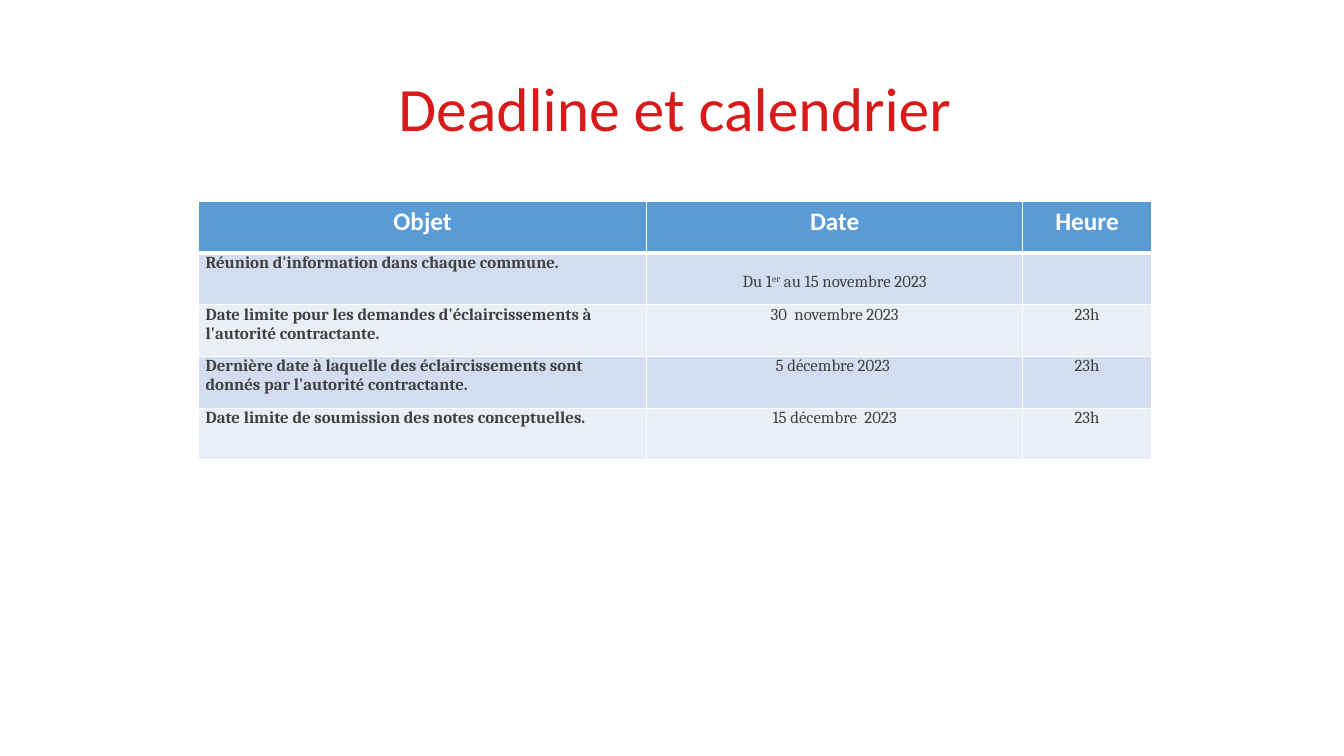
"""Build the slide that lists the deadlines of the call in a table."""
from dataclasses import dataclass

from lxml.etree import SubElement
from pptx import Presentation
from pptx.dml.color import RGBColor
from pptx.enum.text import MSO_ANCHOR, PP_ALIGN
from pptx.oxml.ns import qn
from pptx.slide import Slide
from pptx.table import Table, _Cell
from pptx.text.text import _Paragraph
from pptx.util import Emu, Inches, Pt

PAGE_WIDTH, PAGE_HEIGHT = Inches(13.33), Inches(7.5)
LEFT, WIDTH = 14.78, 70.88
TITLE_TOP, TITLE_HEIGHT = 5.07, 19.33
TABLE_TOP, ROW_HEIGHT = 26.67, 6.83
COLUMN_WIDTHS = (33.33, 28.0, 9.55)
RED, WHITE, GREY, BLUE = "D81A1A", "FFFFFF", "404040", "5B9BD5"
BANDS = ("D2DEEF", "EAEFF7")
HEADINGS = ("Objet", "Date", "Heure")


@dataclass(frozen=True)
class Deadline:
    """One line of the calendar; the date may be cut into spans, the second one raised."""

    subject: str
    date: tuple[str, ...]
    hour: str = "23h"
    line_spacing: float = 1.0
    space_before: int = 6


@dataclass(frozen=True)
class Style:
    """The look of a paragraph."""

    size: int
    font: str
    color: str
    bold: bool = False
    align: PP_ALIGN = PP_ALIGN.CENTER
    line_spacing: float = 1.0
    space_before: int = 0
    space_after: int = 0


DEADLINES = (
    Deadline("Réunion d'information dans chaque commune.",
             ("Du 1", "er", " au 15 novembre 2023"), "", 2.0, 12),
    Deadline("Date limite pour les demandes d'éclaircissements à l'autorité contractante.",
             ("30  novembre 2023",)),
    Deadline("Dernière date à laquelle des éclaircissements sont donnés par l'autorité contractante. ",
             ("5 décembre 2023 ",)),
    Deadline("Date limite de soumission des notes conceptuelles. ",
             ("15 décembre  2023",)),
)


def across(share: float) -> Emu:
    """Turn a percentage of the page width into a length."""
    return Emu(round(PAGE_WIDTH * share / 100))


def down(share: float) -> Emu:
    """Turn a percentage of the page height into a length."""
    return Emu(round(PAGE_HEIGHT * share / 100))


def color_of(value: str) -> RGBColor:
    """Turn a hex string into a colour."""
    return RGBColor.from_string(value)


def write(para: _Paragraph, spans: tuple[str, ...], style: Style) -> None:
    """Fill a paragraph with spans and raise the second one."""
    para.text = spans[0]
    for span in spans[1:]:
        para.add_run().text = span
    para.alignment = style.align
    para.line_spacing = style.line_spacing
    para.space_before, para.space_after = Pt(style.space_before), Pt(style.space_after)
    for index, run in enumerate(para.runs):
        run.font.size, run.font.name, run.font.bold = Pt(style.size), style.font, style.bold
        run.font.color.rgb = color_of(style.color)
        if index == 1:
            run.font._element.set("baseline", "30000")


def paint(cell: _Cell, fill: str, top: int = 1, bottom: int = 1) -> None:
    """Give a cell white borders and a plain fill."""
    properties = cell._tc.get_or_add_tcPr()
    for side, width in (("L", 1), ("R", 1), ("T", top), ("B", bottom)):
        line = SubElement(properties, qn(f"a:ln{side}"), w=str(Pt(width)))
        SubElement(SubElement(line, qn("a:solidFill")), qn("a:srgbClr"), val=WHITE)
    cell.fill.solid()
    cell.fill.fore_color.rgb = color_of(fill)


def add_title(page: Slide) -> None:
    """Place the centred title."""
    box = page.shapes.add_textbox(across(LEFT), down(TITLE_TOP), across(WIDTH), down(TITLE_HEIGHT))
    box.text_frame.word_wrap = True
    box.text_frame.vertical_anchor = MSO_ANCHOR.MIDDLE
    write(box.text_frame.paragraphs[0], ("Deadline et calendrier",),
          Style(44, "Calibri", RED, line_spacing=0.9))


def fill_deadline(table: Table, row: int, deadline: Deadline) -> None:
    """Write one deadline into its row."""
    styles = (
        Style(12, "Cambria", GREY, True, PP_ALIGN.LEFT, 1.0, 6, 6),
        Style(12, "Cambria", GREY, line_spacing=deadline.line_spacing,
              space_before=deadline.space_before, space_after=6),
        Style(12, "Cambria", GREY, space_before=6, space_after=6),
    )
    entries = ((deadline.subject,), deadline.date, (deadline.hour,))
    for column, (spans, style) in enumerate(zip(entries, styles)):
        cell = table.cell(row, column)
        paint(cell, BANDS[(row - 1) % 2], top=3 if row == 1 else 1)
        if spans[0]:
            cell.margin_left = cell.margin_right = Inches(0.07)
            cell.margin_top = cell.margin_bottom = 0
            write(cell.text_frame.paragraphs[0], spans, style)


def add_calendar(page: Slide) -> None:
    """Place the table of deadlines."""
    count = len(DEADLINES) + 1
    table = page.shapes.add_table(count, len(HEADINGS), across(LEFT), down(TABLE_TOP),
                                  across(WIDTH), down(ROW_HEIGHT * count)).table
    for column, width in zip(table.columns, COLUMN_WIDTHS):
        column.width = across(width)
    for row in table.rows:
        row.height = down(ROW_HEIGHT)
    for cell, heading in zip(table.rows[0].cells, HEADINGS):
        paint(cell, BLUE, bottom=3)
        write(cell.text_frame.paragraphs[0], (heading,), Style(18, "Calibri", WHITE, True))
    for row, deadline in enumerate(DEADLINES, start=1):
        fill_deadline(table, row, deadline)


def main() -> None:
    """Build and save the deck."""
    deck = Presentation()
    deck.slide_width, deck.slide_height = PAGE_WIDTH, PAGE_HEIGHT
    page = deck.slides.add_slide(deck.slide_layouts[6])
    add_title(page)
    add_calendar(page)
    deck.save("out.pptx")


if __name__ == "__main__":
    main()
